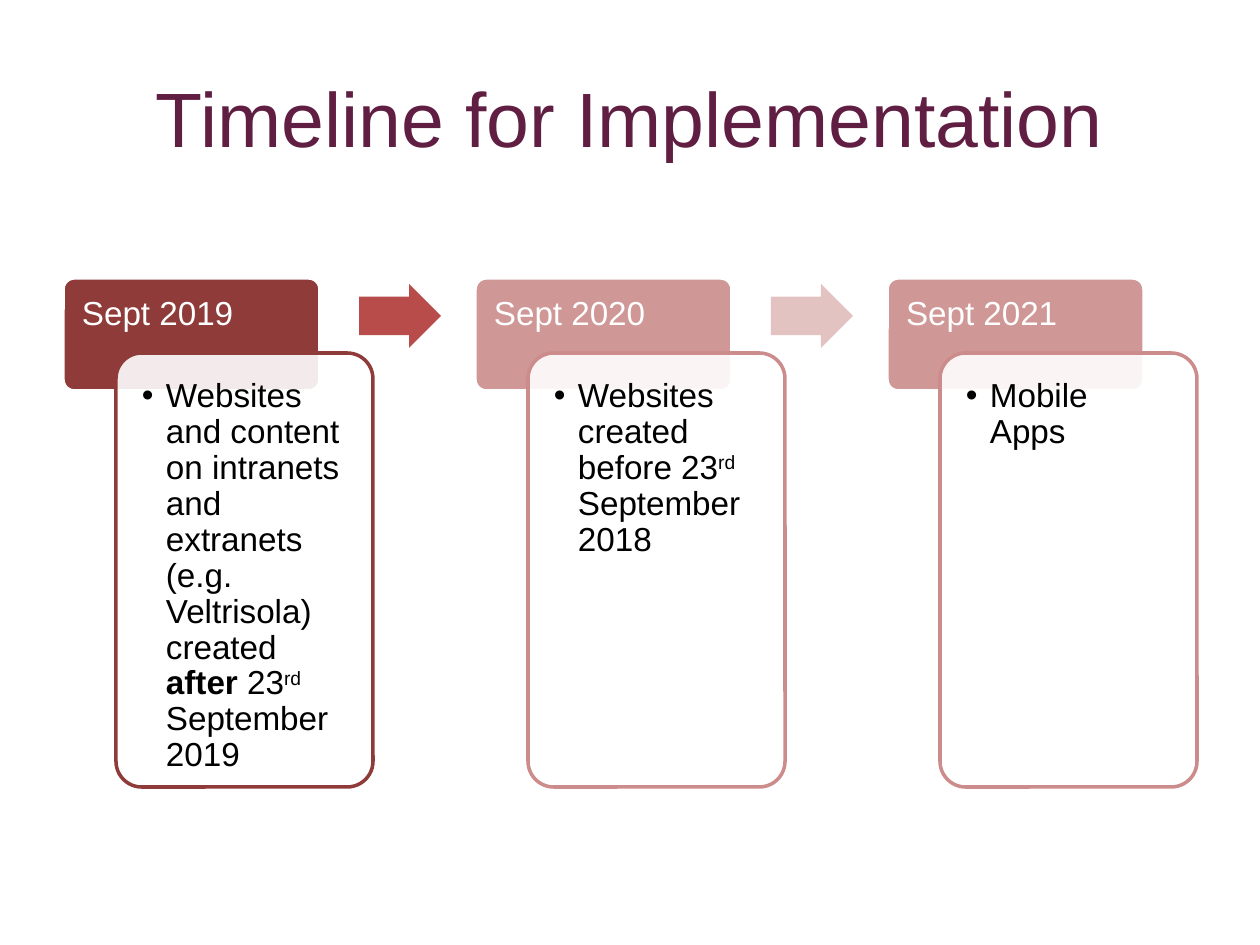
import pptx
import pptx.util
import pptx.dml.color
import pptx.enum.shapes
import pptx.enum.text
import pptx.oxml
import pptx.oxml.ns

RGB = pptx.dml.color.RGBColor
SHAPE = pptx.enum.shapes.MSO_SHAPE
ALIGN = pptx.enum.text.PP_ALIGN
ANCHOR = pptx.enum.text.MSO_ANCHOR

PLUM = RGB(0x60, 0x1E, 0x42)
DARK = RGB(0x8E, 0x3B, 0x39)
ROSE = RGB(0xCF, 0x97, 0x96)
EDGE = RGB(0xCB, 0x8C, 0x8B)
RED = RGB(0xB7, 0x4C, 0x4A)
PALE = RGB(0xE3, 0xC3, 0xC2)
WHITE = RGB(0xFF, 0xFF, 0xFF)
BLACK = RGB(0, 0, 0)

SCALE = 914400 / 126  # EMU in one px
LEFT, STEP = 63, 412  # first column and column pitch


def px(size):
    return pptx.util.Emu(round(size * SCALE))


def element(tag, parent, **attrs):
    node = pptx.oxml.parse_xml(f"<{tag} {pptx.oxml.ns.nsdecls('a')}/>")
    for name, value in attrs.items():
        node.set(name, value)
    parent.append(node)


def write(para, text, font="Arial", size=19, color=BLACK, bold=False, base=0):
    run = para.add_run()
    run.text = text
    run.font.name = font
    run.font.size = pptx.util.Pt(size)
    run.font.color.rgb = color
    run.font.bold = bold
    if base:
        run.font._element.set("baseline", str(base * 1000))


class Deck:
    def __init__(self):
        self.file = pptx.Presentation()
        self.file.slide_width, self.file.slide_height = px(1260), px(945)
        self.slide = self.file.slides.add_slide(self.file.slide_layouts[6])

    def shape(self, kind, box, fill, line=None, adjust=(0.1,), alpha=None):
        shape = self.slide.shapes.add_shape(kind, *map(px, box))
        shape.shadow.inherit = False
        for index, value in enumerate(adjust):
            shape.adjustments[index] = value
        shape.fill.solid()
        shape.fill.fore_color.rgb = fill
        if alpha:
            color = shape._element.spPr.find(".//" + pptx.oxml.ns.qn("a:srgbClr"))
            element("a:alpha", color, val=str(alpha * 1000))
        if line is None:
            shape.line.fill.background()
        else:
            shape.line.color.rgb = line
            shape.line.width = pptx.util.Pt(2)

    def text(self, box, runs, inset=(19, 19, 19, 19), align=ALIGN.LEFT,
             anchor=ANCHOR.TOP, spacing=0.9, bullet=False, **style):
        frame = self.slide.shapes.add_textbox(*map(px, box)).text_frame
        frame.word_wrap = True
        frame.vertical_anchor = anchor
        (frame.margin_left, frame.margin_top,
         frame.margin_right, frame.margin_bottom) = map(px, inset)
        para = frame.paragraphs[0]
        para.alignment = align
        para.line_spacing = spacing
        if bullet:
            props = para._p.get_or_add_pPr()
            props.set("marL", str(px(24)))
            props.set("indent", str(-px(24)))
            element("a:buFont", props, typeface="Arial")
            element("a:buChar", props, char="•")
        for text, extra in runs:
            write(para, text, **style, **extra)

    def stage(self, left, date, runs, fill, edge):
        # Date header
        self.shape(SHAPE.ROUNDED_RECTANGLE, (left, 278, 257, 113), fill, WHITE)
        self.text((left, 278, 257, 76), [(date, {})], inset=(19, 19, 19, 10),
                  color=WHITE)
        # Detail card
        self.shape(SHAPE.ROUNDED_RECTANGLE, (left + 53, 353, 257, 434), WHITE,
                   edge, alpha=90)
        self.text((left + 60, 360, 242, 418), runs, bullet=True)

    def arrow(self, left, fill):
        self.shape(SHAPE.RIGHT_ARROW, (left, 284, 82, 64), fill,
                   adjust=(0.6, 0.5))


STAGES = [
    ("Sept 2019", [
        ("Websites and content on intranets and extranets "
         "(e.g. Veltrisola) created ", {}),
        ("after ", {"bold": True}), ("23", {}), ("rd", {"base": 30}),
        (" September 2019", {})], DARK, DARK),
    ("Sept 2020", [
        ("Websites created before 23", {}), ("rd", {"base": 30}),
        (" September 2018", {})], ROSE, EDGE),
    ("Sept 2021", [("Mobile Apps", {})], ROSE, EDGE),
]


def main():
    deck = Deck()

    # Title
    deck.text((63, 38, 1134, 157), [("Timeline for Implementation", {})],
              inset=(13, 6, 13, 6), align=ALIGN.CENTER, anchor=ANCHOR.MIDDLE,
              spacing=1.0, size=44, color=PLUM)

    # Stages, with an arrow after all but the last
    for index, stage in enumerate(STAGES):
        deck.stage(LEFT + index * STEP, *stage)
    for index, fill in enumerate((RED, PALE)):
        deck.arrow(LEFT + 296 + index * STEP, fill)

    deck.file.save("out.pptx")


if __name__ == "__main__":
    main()
